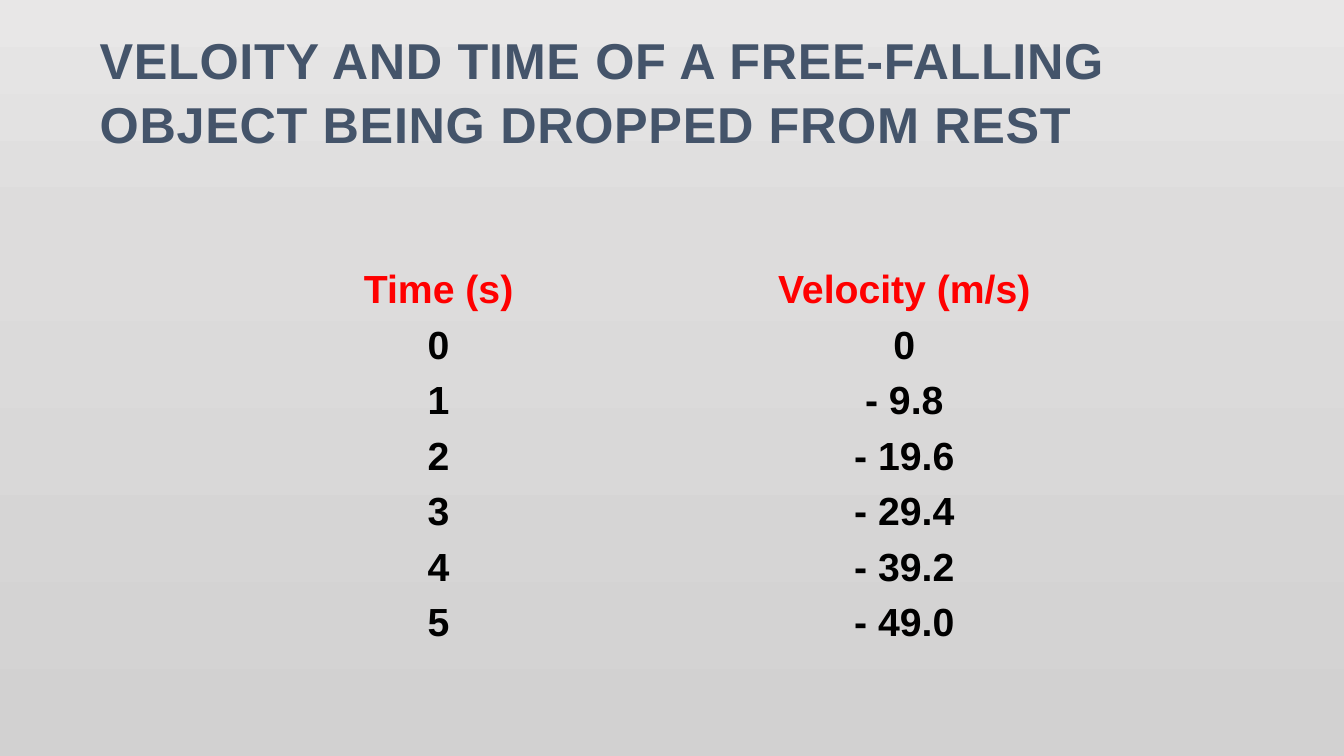
import copy
from dataclasses import dataclass

import lxml.etree
import pptx
import pptx.dml.color
import pptx.enum.text
import pptx.oxml.ns
import pptx.util

Pt = pptx.util.Pt
qn = pptx.oxml.ns.qn


@dataclass(frozen=True)
class Theme:
    """Colours, font and type sizes of the slide."""
    font: str = "Arial"
    heading: str = "44546A"
    header: str = "FF0000"
    value: str = "000000"
    heading_size: int = 36
    table_size: int = 28
    backdrop: tuple = ((0, "E8E7E7"), (0.31, "DDDCDC"), (1, "D2D1D1"))


THEME = Theme()
READINGS = (
    ("Time (s)", "Velocity (m/s)"),
    ("0", "0"),
    ("1", "- 9.8"),
    ("2", "- 19.6"),
    ("3", "- 29.4"),
    ("4", "- 39.2"),
    ("5", "- 49.0"),
)


def style_font(font, size, colour):
    """Apply the theme font in bold with the given size and colour."""
    font.name = THEME.font
    font.size = Pt(size)
    font.bold = True
    font.color.rgb = pptx.dml.color.RGBColor.from_string(colour)


def paint_backdrop(slide):
    """Fill the background with a gradient running from top to bottom."""
    fill = slide.background.fill
    fill.gradient()
    fill.gradient_angle = 270
    first_stop = fill.gradient_stops[0]._gs
    first_stop.addnext(copy.deepcopy(first_stop))
    for stop, (position, colour) in zip(fill.gradient_stops, THEME.backdrop):
        stop.position = position
        stop.color.rgb = pptx.dml.color.RGBColor.from_string(colour)


def add_heading(slide, left, top, width, height):
    """Place the slide heading in the title placeholder."""
    heading = slide.shapes.title
    heading.left, heading.top = Pt(left), Pt(top)
    heading.width, heading.height = Pt(width), Pt(height)
    frame = heading.text_frame
    frame.text = "VELOITY AND TIME OF A FREE-FALLING OBJECT BEING DROPPED FROM REST"
    frame.word_wrap = True
    frame.auto_size = pptx.enum.text.MSO_AUTO_SIZE.NONE
    frame.vertical_anchor = pptx.enum.text.MSO_ANCHOR.BOTTOM
    frame.margin_bottom = Pt(2)
    paragraph = frame.paragraphs[0]
    paragraph.alignment = pptx.enum.text.PP_ALIGN.LEFT
    paragraph.line_spacing = 1.05
    font = paragraph.runs[0].font
    style_font(font, THEME.heading_size, THEME.heading)
    font._element.set("spc", "50")


def clear_cell(cell):
    """Remove the borders and the fill of a table cell."""
    properties = cell._tc.get_or_add_tcPr()
    for side in ("a:lnL", "a:lnR", "a:lnT", "a:lnB"):
        border = lxml.etree.SubElement(properties, qn(side), w="0")
        lxml.etree.SubElement(border, qn("a:noFill"))
    cell.fill.background()


def add_readings(slide, left, top, width, height):
    """Place the table of times and velocities in equal rows and columns."""
    readings = slide.shapes.add_table(
        len(READINGS), len(READINGS[0]), Pt(left), Pt(top), Pt(width), Pt(height)
    ).table
    readings.first_row = False
    readings.horz_banding = False
    for row, entries in enumerate(READINGS):
        for column, entry in enumerate(entries):
            cell = readings.cell(row, column)
            clear_cell(cell)
            cell.vertical_anchor = pptx.enum.text.MSO_ANCHOR.MIDDLE
            cell.text_frame.text = entry
            paragraph = cell.text_frame.paragraphs[0]
            paragraph.alignment = pptx.enum.text.PP_ALIGN.CENTER
            colour = THEME.value if row else THEME.header
            style_font(paragraph.runs[0].font, THEME.table_size, colour)


def main():
    """Build the slide and save it."""
    deck = pptx.Presentation()
    deck.slide_width, deck.slide_height = Pt(960), Pt(540)
    slide = deck.slides.add_slide(deck.slide_layouts.get_by_name("Title Only"))
    paint_backdrop(slide)
    add_heading(slide, 64, 21.6, 832, 90)
    add_readings(slide, 147, 187.2, 665.2, 277.9)
    deck.save("out.pptx")


if __name__ == "__main__":
    main()
